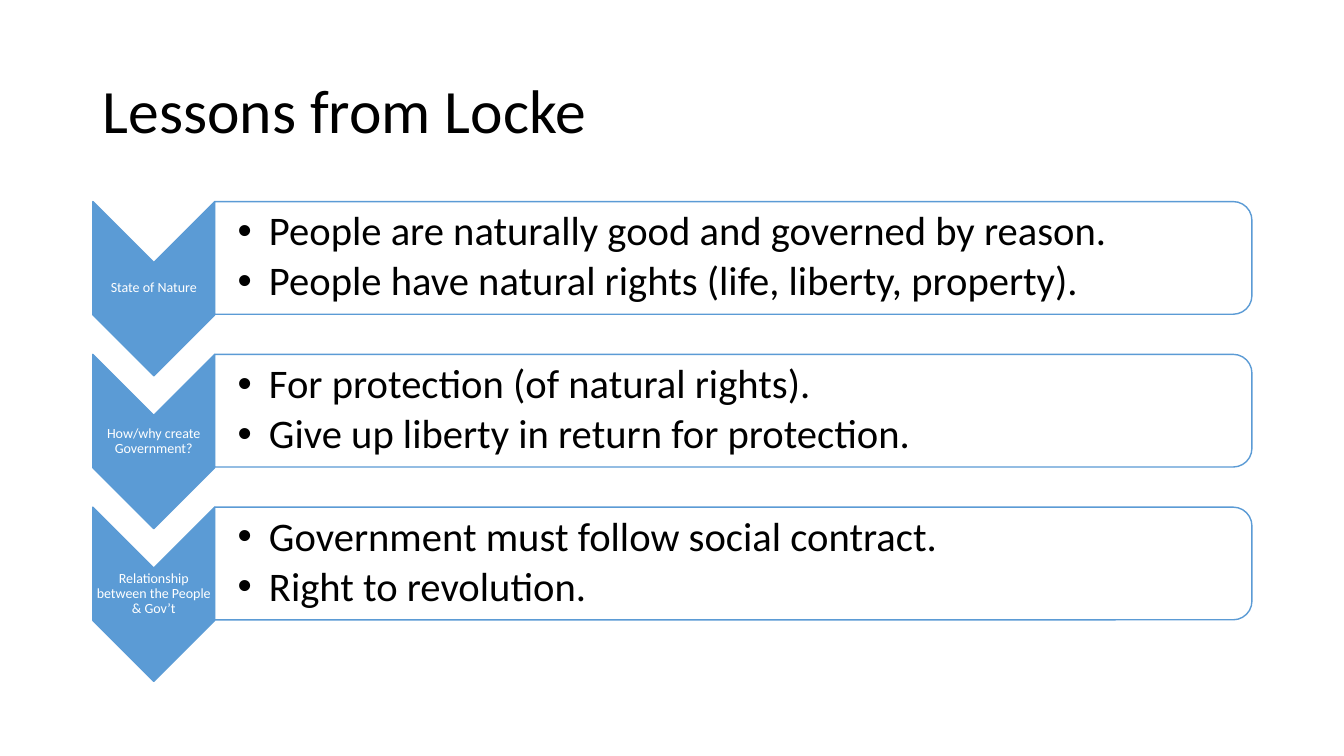
from lxml import etree
from pptx import Presentation
from pptx import util as u
from pptx.dml.color import RGBColor
from pptx.enum import shapes, text
from pptx.oxml import ns

BLUE = RGBColor(0x5B, 0x9B, 0xD5)
WHITE = RGBColor(255, 255, 255)
BLACK = RGBColor(0, 0, 0)

LESSONS = [
    ("State of Nature",
     ["People are naturally good and governed by reason.",
      "People have natural rights (life, liberty, property)."]),
    ("How/why create Government?",
     ["For protection (of natural rights).",
      "Give up liberty in return for protection."]),
    ("Relationship between the People & Gov’t",
     ["Government must follow social contract.", "Right to revolution."]),
]
FIRST_TOP, PITCH = 5.08, 3.85
CHEVRON_LEFT, CHEVRON_WIDTH, CHEVRON_HEIGHT = 2.34, 3.07, 4.39
PANEL_LEFT = CHEVRON_LEFT + CHEVRON_WIDTH


def write(para, words, size, color, font="Calibri", align=None, after=0, bullet=None):
    para.alignment = align
    para.line_spacing = 0.9
    para.space_after = u.Pt(after)
    span = para.add_run()
    span.text = words
    span.font.name = font
    span.font.size = u.Pt(size)
    span.font.color.rgb = color
    if bullet:
        properties = para._p.get_or_add_pPr()
        properties.set("marL", str(u.Cm(0.79)))
        properties.set("indent", str(u.Cm(-0.79)))
        etree.SubElement(properties, ns.qn("a:buFont"), typeface="Arial")
        etree.SubElement(properties, ns.qn("a:buChar"), char=bullet)


class LessonPage:
    def __init__(self, deck):
        self.page = deck.slides.add_slide(deck.slide_layouts[6])

    def turned_shape(self, kind, left, top, width, height, fill, opacity=100):
        box = self.page.shapes.add_shape(
            kind, u.Cm(left + (width - height) / 2), u.Cm(top + (height - width) / 2),
            u.Cm(height), u.Cm(width))
        box.rotation = 90
        box.shadow.inherit = False
        box.fill.solid()
        box.fill.fore_color.rgb = fill
        box.line.color.rgb = BLUE
        box.line.width = u.Pt(1)
        if opacity < 100:
            color = box._element.spPr.find(ns.qn("a:solidFill"))[0]
            etree.SubElement(color, ns.qn("a:alpha"), val=str(opacity * 1000))

    def text_box(self, left, top, width, height, lines, insets, **style):
        box = self.page.shapes.add_textbox(
            u.Cm(left), u.Cm(top), u.Cm(width), u.Cm(height))
        frame = box.text_frame
        frame.word_wrap = True
        frame.vertical_anchor = text.MSO_ANCHOR.MIDDLE
        (frame.margin_left, frame.margin_top,
         frame.margin_right, frame.margin_bottom) = map(u.Cm, insets)
        for index, line in enumerate(lines):
            para = frame.add_paragraph() if index else frame.paragraphs[0]
            write(para, line, **style)

    def lesson(self, top, label, points):
        self.turned_shape(shapes.MSO_SHAPE.CHEVRON, CHEVRON_LEFT, top,
                          CHEVRON_WIDTH, CHEVRON_HEIGHT, BLUE)
        self.text_box(CHEVRON_LEFT, top + 1.53, CHEVRON_WIDTH, 1.32, [label], [0.02] * 4,
                      size=10, color=WHITE, align=text.PP_ALIGN.CENTER, after=3.5)
        self.turned_shape(shapes.MSO_SHAPE.ROUND_2_SAME_RECTANGLE, PANEL_LEFT, top,
                          26.14, 2.84, WHITE, opacity=90)
        self.text_box(PANEL_LEFT, top + 0.13, 26.01, 2.57, points,
                      [0.58, 0.05, 0.05, 0.05],
                      size=29, color=BLACK, after=4.35, bullet="•")


def main():
    deck = Presentation()
    deck.slide_width, deck.slide_height = u.Cm(33.87), u.Cm(19.05)
    page = LessonPage(deck)
    page.text_box(2.34, 1.02, 29.21, 3.68, ["Lessons from Locke"],
                  [0.25, 0.13, 0.25, 0.13], size=44, color=BLACK)
    for row, (label, points) in enumerate(LESSONS):
        page.lesson(FIRST_TOP + row * PITCH, label, points)
    deck.save("out.pptx")


if __name__ == "__main__":
    main()
